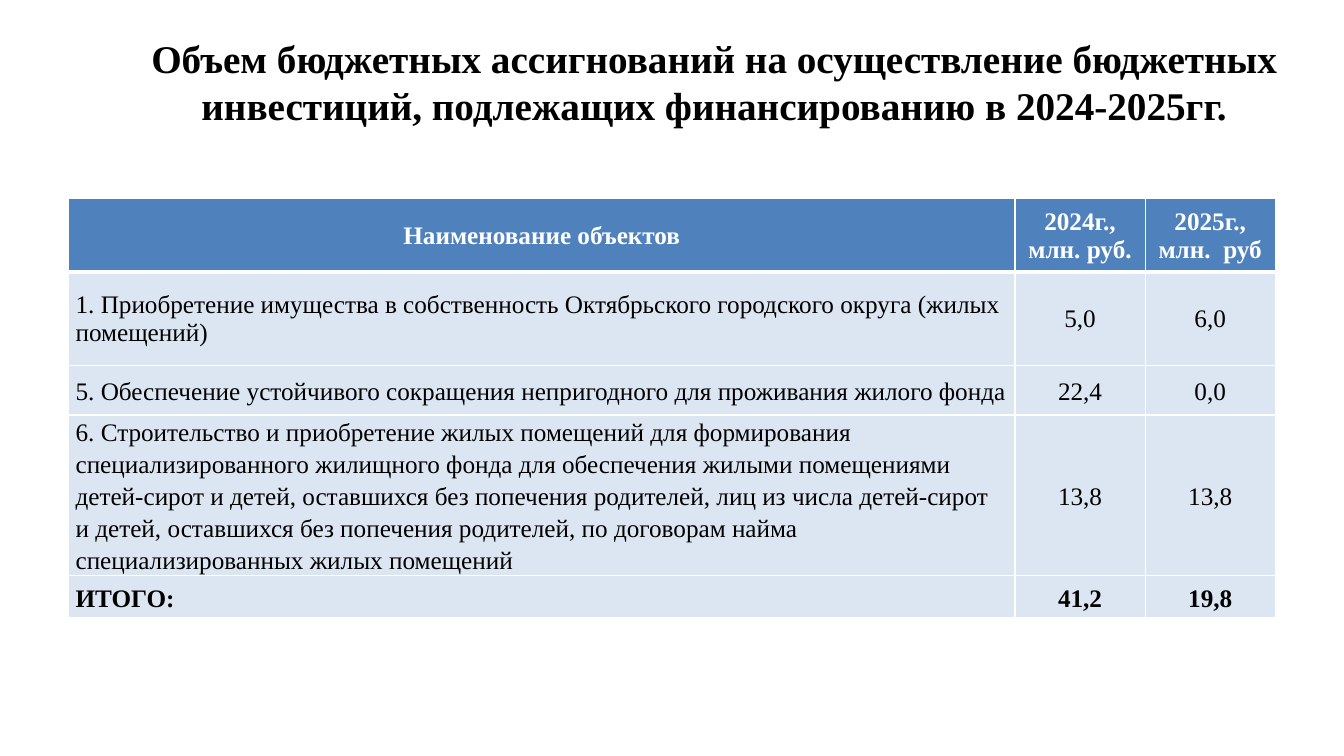
from dataclasses import dataclass

from lxml.etree import SubElement
from pptx import Presentation
from pptx.dml.color import RGBColor as RGB
from pptx.enum.text import MSO_ANCHOR as Anchor, MSO_AUTO_SIZE as AutoSize, PP_ALIGN as Align
from pptx.oxml.ns import qn
from pptx.util import Pt


@dataclass(frozen=True)
class Theme:
    font: str = "Times New Roman"
    text: str = "000000"
    header_text: str = "FFFFFF"
    header_fill: str = "4F81BD"
    body_fill: str = "DCE6F2"
    border: str = "FFFFFF"
    title_size: int = 28
    table_size: int = 18


COLUMNS = (676, 93, 93)
ROW_HEIGHTS = (52.5, 66.5, 35.5, 99.5, 30)
ROWS = (
    ("Наименование объектов", "2024г., млн. руб.", "2025г.,\nмлн.  руб"),
    ("1. Приобретение имущества в собственность Октябрьского городского округа "
     "(жилых помещений)", "5,0", "6,0"),
    ("5. Обеспечение устойчивого сокращения непригодного для проживания жилого фонда",
     "22,4", "0,0"),
    ("6. Строительство и приобретение жилых помещений для формирования "
     "специализированного жилищного фонда для обеспечения жилыми помещениями "
     "детей-сирот и детей, оставшихся без попечения родителей, лиц из числа "
     "детей-сирот и детей, оставшихся без попечения родителей, по договорам найма "
     "специализированных жилых помещений", "13,8", "13,8"),
    ("ИТОГО:", "41,2", "19,8"),
)


class SlideBuilder:
    def __init__(self, prs, theme):
        self.theme = theme
        self.slide = prs.slides.add_slide(prs.slide_layouts[5])

    def format_text(self, tf, size, color, bold, align, spacing=None):
        for p in tf.paragraphs:
            p.alignment = align
            p.line_spacing = spacing
            p.font.name = self.theme.font
            p.font.size = Pt(size)
            p.font.bold = bold
            p.font.color.rgb = RGB.from_string(color)

    def title(self, text, left, top, width, height):
        sp = self.slide.shapes.title
        sp.left, sp.top, sp.width, sp.height = Pt(left), Pt(top), Pt(width), Pt(height)
        tf = sp.text_frame
        tf.text = text
        tf.word_wrap = True
        tf.auto_size = AutoSize.NONE
        tf.vertical_anchor = Anchor.MIDDLE
        self.format_text(tf, self.theme.title_size, self.theme.text, True, Align.CENTER)

    def borders(self, cell, top, bottom):
        tc_pr = cell._tc.get_or_add_tcPr()
        for side, width in (("L", 1), ("R", 1), ("T", top), ("B", bottom)):
            ln = SubElement(tc_pr, qn(f"a:ln{side}"), w=str(Pt(width)))
            fill = SubElement(ln, qn("a:solidFill"))
            SubElement(fill, qn("a:srgbClr"), val=self.theme.border)

    def cell(self, cell, text, row, col):
        theme = self.theme
        header = row == 0
        total = row == len(ROWS) - 1
        cell.text = text
        cell.vertical_anchor = Anchor.MIDDLE
        cell.margin_left = cell.margin_right = Pt(9 if header else 5)
        cell.margin_top = cell.margin_bottom = Pt(3.6 if header else 0)
        self.borders(cell, 3 if row == 1 else 1, 3 if header else 1)
        cell.fill.solid()
        cell.fill.fore_color.rgb = RGB.from_string(
            theme.header_fill if header else theme.body_fill)
        self.format_text(
            cell.text_frame, theme.table_size,
            theme.header_text if header else theme.text,
            header or total,
            Align.CENTER if header or col else Align.LEFT,
            1.15 if row > 1 else None)

    def table(self, rows, widths, heights, left, top):
        table = self.slide.shapes.add_table(
            len(rows), len(widths), Pt(left), Pt(top),
            Pt(sum(widths)), Pt(sum(heights))).table
        table.horz_banding = False
        for column, width in zip(table.columns, widths):
            column.width = Pt(width)
        for i, (texts, height) in enumerate(zip(rows, heights)):
            table.rows[i].height = Pt(height)
            for j, text in enumerate(texts):
                self.cell(table.cell(i, j), text, i, j)


def main():
    prs = Presentation()
    prs.slide_width, prs.slide_height = Pt(960), Pt(540)
    s = SlideBuilder(prs, Theme())
    s.title("Объем бюджетных ассигнований на осуществление бюджетных инвестиций, "
            "подлежащих финансированию в 2024-2025гг.", 78, 13, 864, 90)
    s.table(ROWS, COLUMNS, ROW_HEIGHTS, 49, 142)
    prs.save("out.pptx")


if __name__ == "__main__":
    main()
